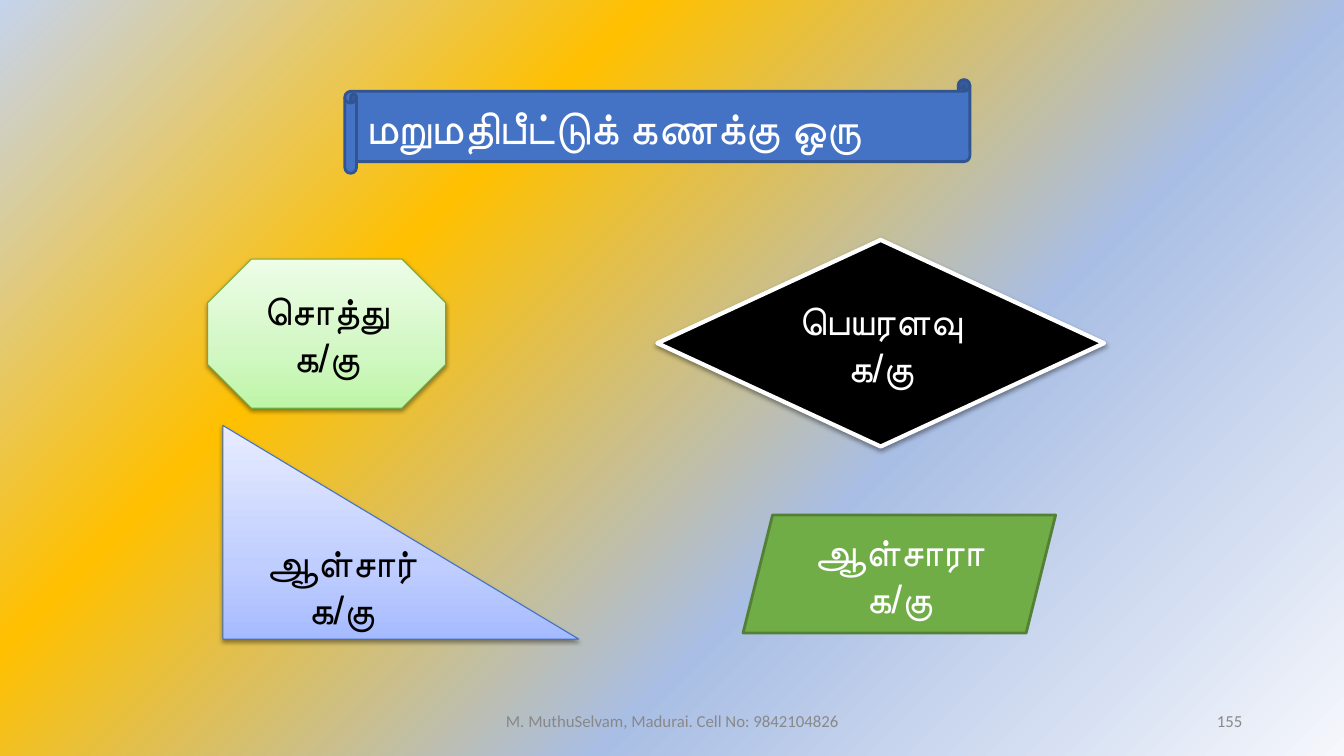
from lxml import etree
from pptx import Presentation
from pptx.dml.color import RGBColor
from pptx.enum.shapes import MSO_SHAPE
from pptx.enum.text import MSO_ANCHOR, PP_ALIGN
from pptx.oxml import parse_xml
from pptx.oxml.ns import nsdecls, qn
from pptx.util import Inches, Pt

SCROLL = MSO_SHAPE.HORIZONTAL_SCROLL
OCTAGON = MSO_SHAPE.OCTAGON
DIAMOND = MSO_SHAPE.DIAMOND
TRIANGLE = MSO_SHAPE.RIGHT_TRIANGLE
PARALLELOGRAM = MSO_SHAPE.PARALLELOGRAM
LEFT, CENTER, RIGHT = PP_ALIGN.LEFT, PP_ALIGN.CENTER, PP_ALIGN.RIGHT
MIDDLE = MSO_ANCHOR.MIDDLE

COLORS = {
    "white": "FFFFFF",
    "black": "000000",
    "blue": "4472C4",
    "blue_edge": "325491",
    "green": "70AD47",
    "green_edge": "538035",
    "octagon_edge": "6DAC43",
    "triangle_edge": "3F6FC3",
    "footer": "888888",
}
BACKDROP = [(0, "F5F7FC"), (36, "A9BEE4"), (69, "FFC000"), (100, "C5D3ED")]
PALE_GREEN = [(0, "BEF5A7"), (35, "D1F7C2"), (100, "EDFDE7")]
PALE_BLUE = [(0, "A6BBFF"), (35, "C0CEFF"), (100, "E7ECFF")]
UPWARD = '<a:lin ang="16200000" scaled="0"/>'
FROM_CORNER = '<a:path path="circle"><a:fillToRect l="100000" t="100000"/></a:path>'


def color(name):
    return RGBColor.from_string(COLORS[name])


def set_gradient(fill_owner, fill, stops, direction):
    fill.gradient()
    gradient = fill_owner.find(qn("a:gradFill"))
    marks = "".join(
        f'<a:gs pos="{percent * 1000}"><a:srgbClr val="{value}"/></a:gs>'
        for percent, value in stops
    )
    fresh = parse_xml(
        f'<a:gradFill {nsdecls("a")} rotWithShape="1">'
        f"<a:gsLst>{marks}</a:gsLst>{direction}</a:gradFill>"
    )
    fill_owner.replace(gradient, fresh)


def add_shadow(shape):
    effects = shape.element.spPr.find(qn("a:effectLst"))
    shadow = etree.SubElement(
        effects, qn("a:outerShdw"),
        blurRad="40000", dist="20000", dir="5400000", rotWithShape="0",
    )
    tint = etree.SubElement(shadow, qn("a:srgbClr"), val=COLORS["black"])
    etree.SubElement(tint, qn("a:alpha"), val="38000")


def write(box, text, font, size, ink, align):
    frame = box.text_frame
    frame.word_wrap = True
    frame.vertical_anchor = MIDDLE
    para = frame.paragraphs[0]
    para.text = text
    para.alignment = align
    para.font.name = font
    para.font.size = Pt(size)
    para.font.color.rgb = color(ink)


def add_figure(page, kind, place, text, fill, edge, weight, ink,
               size=28, align=CENTER, shadow=False):
    shape = page.shapes.add_shape(kind, *map(Inches, place))
    shape.shadow.inherit = False
    if isinstance(fill, list):
        set_gradient(shape.element.spPr, shape.fill, fill, UPWARD)
    else:
        shape.fill.solid()
        shape.fill.fore_color.rgb = color(fill)
    shape.line.color.rgb = color(edge)
    shape.line.width = Pt(weight)
    if shadow:
        add_shadow(shape)
    write(shape, text, "Arial", size, ink, align)


def add_footer(page, place, text, align):
    box = page.shapes.add_textbox(*map(Inches, place))
    write(box, text, "Calibri", 12, "footer", align)


def main():
    deck = Presentation()
    deck.slide_width = Inches(13.33)
    deck.slide_height = Inches(7.5)
    page = deck.slides.add_slide(deck.slide_layouts[6])
    backdrop = page.background.fill
    set_gradient(page.element.cSld.find(qn("p:bg")).find(qn("p:bgPr")),
                 backdrop, BACKDROP, FROM_CORNER)

    add_figure(page, SCROLL, (3.42, 0.79, 6.2, 0.93), "மறுமதிபீட்டுக் கணக்கு ஒரு",
               "blue", "blue_edge", 2, "white", size=32, align=LEFT)
    add_figure(page, OCTAGON, (2.06, 2.57, 2.36, 1.48), "சொத்து க/கு",
               PALE_GREEN, "octagon_edge", 0.75, "black", shadow=True)
    add_figure(page, DIAMOND, (6.52, 2.38, 4.43, 2.05), "பெயரளவு க/கு",
               "black", "white", 3, "white", shadow=True)
    add_figure(page, TRIANGLE, (2.21, 4.22, 3.53, 2.12), "ஆள்சார் க/கு",
               PALE_BLUE, "triangle_edge", 0.75, "black", shadow=True)
    add_figure(page, PARALLELOGRAM, (7.37, 5.11, 3.1, 1.17), "ஆள்சாரா க/கு",
               "green", "green_edge", 2, "white")

    add_footer(page, (4.42, 6.95, 4.5, 0.4),
               "M. MuthuSelvam, Madurai. Cell No: 9842104826", CENTER)
    add_footer(page, (9.42, 6.95, 3, 0.4), "155", RIGHT)
    deck.save("out.pptx")


if __name__ == "__main__":
    main()
